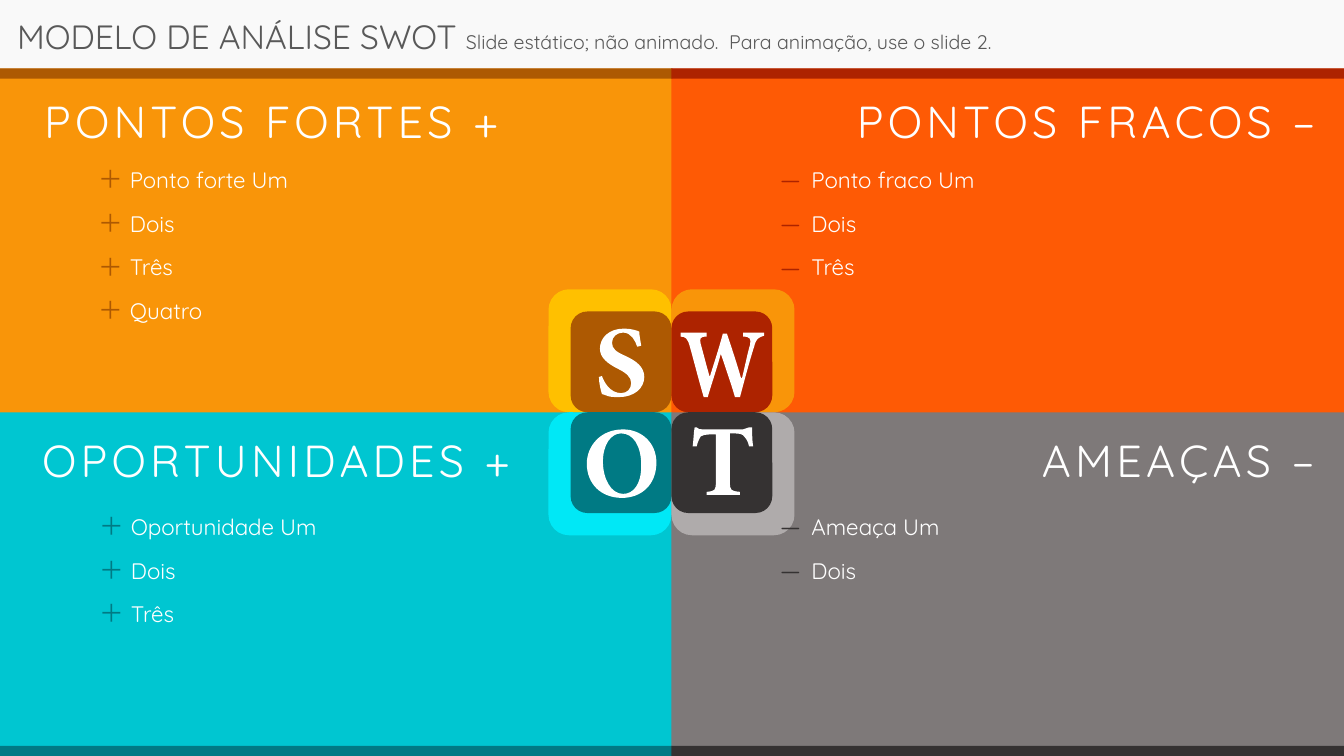
"""Build a four-quadrant SWOT analysis slide."""
import dataclasses

import pptx
import pptx.dml.color
import pptx.enum.shapes
import pptx.enum.text
import pptx.oxml.ns
import pptx.util
from lxml import etree
from pptx.util import Inches

RGB = pptx.dml.color.RGBColor
SHAPE = pptx.enum.shapes.MSO_SHAPE
ALIGN = pptx.enum.text.PP_ALIGN
FIT_TEXT = pptx.enum.text.MSO_AUTO_SIZE.SHAPE_TO_FIT_TEXT
tag = pptx.oxml.ns.qn

WHITE = RGB(0xFF, 0xFF, 0xFF)
PAPER = RGB(0xF9, 0xF9, 0xF9)
TITLE_GREY = RGB(0x59, 0x59, 0x59)
ORANGE = RGB(0xF9, 0x95, 0x09)
BROWN = RGB(0xAD, 0x59, 0x02)
YELLOW = RGB(0xFF, 0xC0, 0x00)
RED_ORANGE = RGB(0xFE, 0x5A, 0x05)
DARK_RED = RGB(0xAD, 0x23, 0x00)
TURQUOISE = RGB(0x00, 0xC6, 0xD1)
DARK_TEAL = RGB(0x00, 0x7A, 0x84)
CYAN = RGB(0x00, 0xE8, 0xF6)
GREY = RGB(0x7E, 0x79, 0x79)
CHARCOAL = RGB(0x35, 0x32, 0x32)
LIGHT_GREY = RGB(0xAF, 0xAB, 0xAB)

FONT = "Quicksand"
SLIDE_WIDTH, SLIDE_HEIGHT = 13.33, 7.5
FIELD_WIDTH = 6.67
CENTER_X, CENTER_Y = 6.66, 4.09
TOP = 0.68
BAR_HEIGHT = 0.1
HALO_SIZE, TILE_SIZE = 1.22, 1

# Each contour holds points (x, y) and Bézier curves (x1, y1, x2, y2, x, y) in hundredths of an inch.
LETTER_S = [[
    (632, 344), (630, 338, 626, 330, 618, 330), (612, 330, 607, 334, 607, 340),
    (607, 346, 611, 349, 620, 353), (631, 358, 639, 364, 639, 374),
    (639, 385, 629, 394, 614, 394), (610, 394, 606, 394, 603, 393),
    (600, 392, 598, 391, 597, 391), (596, 388, 594, 380, 594, 374), (597, 373),
    (599, 379, 605, 390, 616, 390), (622, 390, 626, 386, 626, 380),
    (626, 374, 621, 370, 613, 366), (603, 361, 595, 355, 595, 346),
    (595, 335, 604, 326, 619, 326), (626, 326, 632, 328, 634, 329),
    (634, 332, 635, 337, 636, 343)]]
LETTER_W = [[
    (758, 333), (752, 335, 750, 336, 748, 344), (746, 350, 741, 367, 734, 394),
    (729, 394), (725, 380, 720, 366, 715, 351), (711, 366, 706, 380, 702, 394),
    (698, 394), (693, 377, 689, 361, 684, 343), (682, 336, 680, 334, 675, 334),
    (675, 330), (701, 330), (701, 334), (694, 334, 694, 336, 695, 341),
    (698, 352, 701, 364, 704, 374), (708, 361, 713, 346, 717, 331), (721, 331),
    (726, 346, 731, 361, 735, 375), (736, 375), (739, 363, 742, 348, 744, 342),
    (745, 336, 744, 334, 737, 334), (737, 330), (758, 330)]]
LETTER_O = [
    [(651, 459), (651, 481, 636, 494, 617, 494), (596, 494, 582, 480, 582, 460),
     (582, 443, 595, 426, 618, 426), (636, 426, 651, 439, 651, 459)],
    [(598, 458), (598, 475, 606, 490, 618, 490), (628, 490, 636, 481, 636, 462),
     (636, 442, 628, 430, 616, 430), (606, 430, 598, 441, 598, 458)]]
LETTER_T = [[
    (743, 443), (742, 438, 740, 435, 738, 433), (737, 431, 734, 430, 728, 430),
    (724, 430), (724, 478), (724, 487, 725, 487, 734, 488), (734, 491),
    (701, 491), (701, 488), (709, 487, 710, 487, 710, 478), (710, 431),
    (707, 431), (698, 431, 697, 432, 695, 433), (694, 435, 692, 438, 691, 443),
    (687, 443), (688, 436, 688, 429, 689, 424), (691, 424),
    (693, 426, 694, 426, 697, 426), (737, 426), (740, 426, 741, 425, 743, 424),
    (746, 424), (746, 428, 746, 437, 747, 443)]]


@dataclasses.dataclass
class Quadrant:
    """Content, colours and text places of one quarter of the slide."""
    column: int
    row: int
    field: RGB
    accent: RGB
    halo: RGB
    letter: list
    heading: str
    heading_box: tuple
    bullet: str
    points: tuple
    points_box: tuple


QUADRANTS = [
    Quadrant(0, 0, ORANGE, BROWN, YELLOW, LETTER_S, "PONTOS FORTES +", (0.34, 0.88, 5.23, 0.64),
             "＋", ("Ponto forte Um", "Dois", "Três", "Quatro"), (0.88, 1.6, 5.6, 1.72)),
    Quadrant(1, 0, RED_ORANGE, DARK_RED, ORANGE, LETTER_W, "PONTOS FRACOS –", (7.76, 0.88, 5.39, 0.64),
             "—", ("Ponto fraco Um", "Dois", "Três"), (7.64, 1.6, 5.32, 1.28)),
    Quadrant(0, 1, TURQUOISE, DARK_TEAL, CYAN, LETTER_O, "OPORTUNIDADES +", (0.32, 4.24, 5.3, 0.64),
             "＋", ("Oportunidade Um", "Dois", "Três"), (0.89, 5.04, 5.6, 1.28)),
    Quadrant(1, 1, GREY, CHARCOAL, LIGHT_GREY, LETTER_T, "AMEAÇAS –", (9.64, 4.24, 3.5, 0.64),
             "—", ("Ameaça Um", "Dois"), (7.64, 5.04, 5.3, 0.81)),
]


def paint(shape, color):
    """Give a shape a flat fill without line or shadow."""
    shape.shadow.inherit = False
    shape.fill.solid()
    shape.fill.fore_color.rgb = color
    shape.line.fill.background()


def add_block(shapes, kind, left, top, width, height, color):
    """Add a flat preset shape."""
    paint(shapes.add_shape(kind, Inches(left), Inches(top), Inches(width), Inches(height)), color)


def add_tile(shapes, quadrant, size, color):
    """Add a rounded square that touches the centre of the slide."""
    left = CENTER_X - size * (1 - quadrant.column)
    top = CENTER_Y - size * (1 - quadrant.row)
    add_block(shapes, SHAPE.ROUNDED_RECTANGLE, left, top, size, size, color)


def bend(line, controls, letter):
    """Turn a line of a letter into a Bézier curve with two control points."""
    line.tag = tag("a:cubicBezTo")
    for index in (0, 1):
        x, y = controls[2 * index:2 * index + 2]
        control = etree.Element(tag("a:pt"), x=str(Inches(x / 100) - letter.left),
                                y=str(Inches(y / 100) - letter.top))
        line.insert(index, control)


def add_letter(shapes, contours):
    """Add a white letter outline."""
    outlines = [[(Inches(s[-2] / 100), Inches(s[-1] / 100)) for s in contour] for contour in contours]
    builder = shapes.build_freeform(*outlines[0][0])
    for index, outline in enumerate(outlines):
        if index:
            builder.move_to(*outline[0])
        builder.add_line_segments(outline[1:], close=True)
    letter = builder.convert_to_shape()
    paint(letter, WHITE)
    segments = [segment for contour in contours for segment in contour[1:]]
    for line, segment in zip(list(letter._element.iter(tag("a:lnTo"))), segments):
        if len(segment) == 6:
            bend(line, segment[:4], letter)


def write(paragraph, text, size=16, color=WHITE, spacing=0, align=ALIGN.LEFT):
    """Add formatted text to a paragraph."""
    paragraph.alignment = align
    run = paragraph.add_run()
    run.text = text
    run.font.name = FONT
    run.font.size = pptx.util.Pt(size)
    run.font.color.rgb = color
    if spacing:
        run.font._element.set("spc", str(spacing * 100))


def set_bullet(paragraph, character, color):
    """Give a paragraph a hanging coloured bullet."""
    properties = paragraph._p.get_or_add_pPr()
    properties.set("marL", str(Inches(0.31)))
    properties.set("indent", str(Inches(-0.31)))
    bullet_color = etree.SubElement(properties, tag("a:buClr"))
    etree.SubElement(bullet_color, tag("a:srgbClr"), val=str(color))
    etree.SubElement(properties, tag("a:buSzPct"), val="110000")
    etree.SubElement(properties, tag("a:buFont"), typeface=FONT)
    etree.SubElement(properties, tag("a:buChar"), char=character)


def add_text_frame(shapes, box):
    """Add a wrapping text box and return its text frame."""
    frame = shapes.add_textbox(*map(Inches, box)).text_frame
    frame.word_wrap = True
    frame.auto_size = FIT_TEXT
    return frame


def add_quadrant_text(shapes, quadrant):
    """Add the heading and the bulleted points of a quadrant."""
    heading = add_text_frame(shapes, quadrant.heading_box).paragraphs[0]
    write(heading, quadrant.heading, size=32, spacing=3,
          align=ALIGN.RIGHT if quadrant.column else ALIGN.LEFT)
    frame = add_text_frame(shapes, quadrant.points_box)
    for index, point in enumerate(quadrant.points):
        paragraph = frame.add_paragraph() if index else frame.paragraphs[0]
        paragraph.space_after = pptx.util.Pt(12)
        write(paragraph, point)
        set_bullet(paragraph, quadrant.bullet, quadrant.accent)


def set_title(title):
    """Place the title and write its two parts."""
    title.left, title.top, title.width, title.height = map(Inches, (0.07, 0.11, 12.64, 0.5))
    frame = title.text_frame
    frame.auto_size = FIT_TEXT
    frame.vertical_anchor = pptx.enum.text.MSO_ANCHOR.TOP
    write(frame.paragraphs[0], "MODELO DE ANÁLISE SWOT ", size=24, color=TITLE_GREY)
    write(frame.paragraphs[0], "Slide estático; não animado.  Para animação, use o slide 2.",
          size=14, color=TITLE_GREY)


def main():
    """Build and save the slide."""
    deck = pptx.Presentation()
    deck.slide_width, deck.slide_height = Inches(SLIDE_WIDTH), Inches(SLIDE_HEIGHT)
    slide = deck.slides.add_slide(deck.slide_layouts[5])
    slide.background.fill.solid()
    slide.background.fill.fore_color.rgb = PAPER
    shapes = slide.shapes
    set_title(shapes.title)
    for quadrant in QUADRANTS:
        top, height = ((TOP, 3.75), (CENTER_Y, SLIDE_HEIGHT - CENTER_Y))[quadrant.row]
        add_block(shapes, SHAPE.RECTANGLE, quadrant.column * CENTER_X, top, FIELD_WIDTH, height, quadrant.field)
    for quadrant in QUADRANTS:
        add_tile(shapes, quadrant, HALO_SIZE, quadrant.halo)
    tiles = shapes.add_group_shape().shapes
    for quadrant in QUADRANTS:
        add_tile(tiles, quadrant, TILE_SIZE, quadrant.accent)
    for quadrant in QUADRANTS:
        add_quadrant_text(shapes, quadrant)
        add_letter(shapes, quadrant.letter)
        bar_top = (TOP, SLIDE_HEIGHT - BAR_HEIGHT)[quadrant.row]
        add_block(shapes, SHAPE.RECTANGLE, quadrant.column * CENTER_X, bar_top, FIELD_WIDTH, BAR_HEIGHT,
                  quadrant.accent)
    deck.save("out.pptx")


if __name__ == "__main__":
    main()
